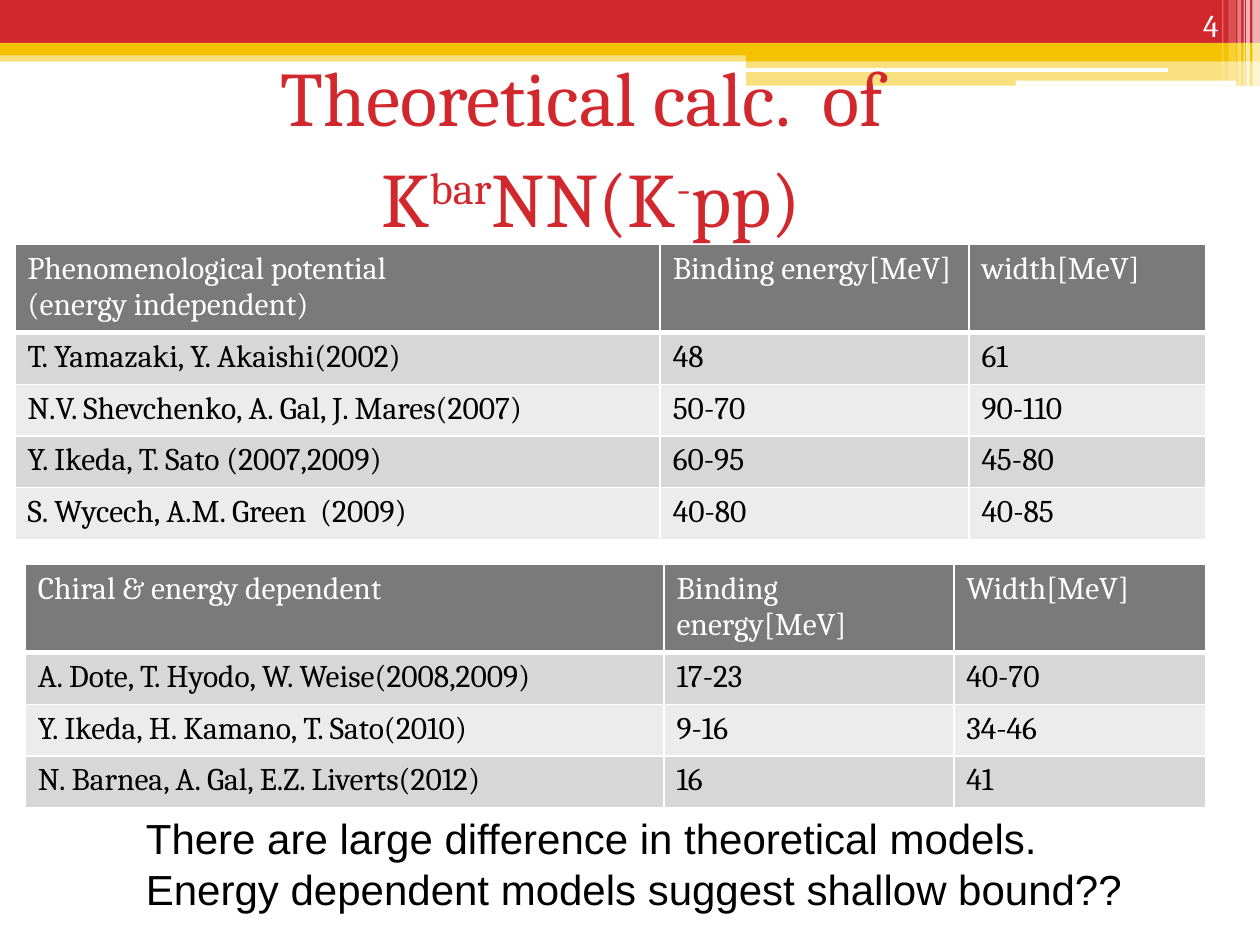
from dataclasses import dataclass

from lxml import etree
from pptx import Presentation
from pptx.dml.color import RGBColor
from pptx.enum.shapes import MSO_SHAPE
from pptx.enum.text import MSO_ANCHOR, MSO_AUTO_SIZE, PP_ALIGN
from pptx.oxml.ns import qn
from pptx.util import Inches, Pt

RECTANGLE, ROUNDED = MSO_SHAPE.RECTANGLE, MSO_SHAPE.ROUNDED_RECTANGLE
TOP, BOTTOM = MSO_ANCHOR.TOP, MSO_ANCHOR.BOTTOM
CENTER, RIGHT = PP_ALIGN.CENTER, PP_ALIGN.RIGHT
NO_FIT, GROW = MSO_AUTO_SIZE.NONE, MSO_AUTO_SIZE.SHAPE_TO_FIT_TEXT

# The slide is a grid of 100 columns by 75 rows.
COLUMNS, ROWS = 100, 75
SLIDE_WIDTH, SLIDE_HEIGHT = Inches(10), Inches(7.5)


@dataclass(frozen=True)
class Theme:
    red: str = "D1282E"
    yellow: str = "F5C201"
    white: str = "FFFFFF"
    black: str = "000000"
    header: str = "7A7A7A"
    bands: tuple = ("D7D7D7", "ECECEC")
    serif: str = "Cambria"
    sans: str = "Arial"
    title_size: int = 44
    title_leading: int = 58
    note_size: int = 24
    body_size: int = 18


THEME = Theme()


def across(columns):
    return round(SLIDE_WIDTH * columns / COLUMNS)


def down(rows):
    return round(SLIDE_HEIGHT * rows / ROWS)


def place(box):
    left, top, width, height = box
    return across(left), down(top), across(width), down(height)


def add_run(paragraph, text, size, color, font=THEME.serif, raised=False):
    run = paragraph.add_run()
    run.text = text
    run.font.name = font
    run.font.size = Pt(size)
    run.font.bold = False
    run.font.color.rgb = RGBColor.from_string(color)
    if raised:
        run.font._element.set("baseline", "30000")


def paragraphs_for(frame, lines):
    """Yield one paragraph of the frame with each line."""
    for index, line in enumerate(lines):
        yield (frame.add_paragraph() if index else frame.paragraphs[0]), line


def add_bar(slide, box, color, opacity=100, kind=RECTANGLE):
    bar = slide.shapes.add_shape(kind, *place(box))
    bar.shadow.inherit = False
    bar.line.fill.background()
    bar.fill.solid()
    bar.fill.fore_color.rgb = RGBColor.from_string(color)
    if opacity < 100:
        tint = bar.element.spPr.find(qn("a:solidFill"))[0]
        etree.SubElement(tint, qn("a:alpha"), val=str(opacity * 1000))


def add_banner(slide, box):
    left, top, width, height = box
    split = left + 59.2
    right_part = left + width - split
    add_bar(slide, (left, top + 4, width, 0.9), THEME.yellow, 50)
    add_bar(slide, (left, top, width, 3.4), THEME.red)
    add_bar(slide, (left, top + 3.4, width, 1), THEME.yellow)
    add_bar(slide, (split, top + 3.9, right_part, 0.95), THEME.yellow)
    add_bar(slide, (split, top + 4.85, right_part, height - 4.85), THEME.yellow, 50)
    add_bar(slide, (split, top + 5.4, 33.5, 0.3), THEME.white, kind=ROUNDED)
    add_bar(slide, (left + 80.6, top + 6.4, 17.5, 0.4), THEME.white, kind=ROUNDED)
    # Offset, width, height and opacity of each stripe at the right end.
    stripes = [(99.4, 0.6, height, 65), (98.9, 0.3, height, 65),
               (98.7, 0.1, height, 60), (98.2, 0.3, height, 40),
               (97.5, 0.6, height - 0.4, 20), (97, 0.1, height - 0.4, 30)]
    for offset, stripe_width, stripe_height, opacity in stripes:
        add_bar(slide, (left + offset, top, stripe_width, stripe_height),
                THEME.white, opacity)


def add_page_number(slide, box, number):
    frame = slide.shapes.add_textbox(*place(box)).text_frame
    frame.word_wrap = True
    frame.vertical_anchor = BOTTOM
    paragraph = frame.paragraphs[0]
    paragraph.alignment = RIGHT
    add_run(paragraph, number, THEME.body_size, THEME.white)


def set_borders(cell, bottom_width):
    properties = cell._tc.get_or_add_tcPr()
    for side, width in (("L", 1), ("R", 1), ("T", 1), ("B", bottom_width)):
        line = etree.SubElement(properties, qn(f"a:ln{side}"), w=str(Pt(width)))
        fill = etree.SubElement(line, qn("a:solidFill"))
        etree.SubElement(fill, qn("a:srgbClr"), val=THEME.white)


def fill_cell(cell, text, fill, color, bottom_width):
    set_borders(cell, bottom_width)
    cell.fill.solid()
    cell.fill.fore_color.rgb = RGBColor.from_string(fill)
    for paragraph, line in paragraphs_for(cell.text_frame, text.split("\n")):
        add_run(paragraph, line, THEME.body_size, color)


def add_result_table(slide, box, column_widths, header_height, records):
    table = slide.shapes.add_table(len(records), len(column_widths), *place(box)).table
    for column, width in zip(table.columns, column_widths):
        column.width = across(width)
    for index, record in enumerate(records):
        is_header = index == 0
        table.rows[index].height = down(header_height if is_header else 4.1)
        fill = THEME.header if is_header else THEME.bands[(index - 1) % 2]
        color = THEME.white if is_header else THEME.black
        for cell, text in zip(table.rows[index].cells, record):
            fill_cell(cell, text, fill, color, 3 if is_header else 1)


def set_title(slide, box, lines):
    title = slide.shapes.title
    title.left, title.top, title.width, title.height = place(box)
    title.element.getparent().append(title.element)  # in front of the banner
    frame = title.text_frame
    frame.auto_size = NO_FIT
    frame.word_wrap = True
    frame.vertical_anchor = TOP
    for paragraph, line in paragraphs_for(frame, lines):
        paragraph.alignment = CENTER
        paragraph.line_spacing = Pt(THEME.title_leading)
        for text, raised in line:
            add_run(paragraph, text, THEME.title_size, THEME.red, raised=raised)


def add_conclusion(slide, box, lines):
    frame = slide.shapes.add_textbox(*place(box)).text_frame
    frame.word_wrap = False
    frame.auto_size = GROW
    for paragraph, line in paragraphs_for(frame, lines):
        add_run(paragraph, line, THEME.note_size, THEME.black, THEME.sans)


def main():
    presentation = Presentation()
    presentation.slide_width, presentation.slide_height = SLIDE_WIDTH, SLIDE_HEIGHT
    slide = presentation.slides.add_slide(presentation.slide_layouts[5])

    add_banner(slide, (0, 0, COLUMNS, 6.8))
    add_page_number(slide, (89.4, 0, 8.3, 4), "4")
    add_result_table(slide, (2, 44.8, 93.7, 19.2), (50.7, 23, 20), 4.1, [
        ("Chiral & energy dependent", "Binding energy[MeV]", "Width[MeV]"),
        ("A. Dote, T. Hyodo, W. Weise(2008,2009)", "17-23", "40-70"),
        ("Y. Ikeda, H. Kamano, T. Sato(2010)", "9-16", "34-46"),
        ("N. Barnea, A. Gal, E.Z. Liverts(2012)", "16", "41"),
    ])
    add_result_table(slide, (1.2, 19.4, 94.5, 23.2), (51.2, 24.5, 18.8), 7, [
        ("Phenomenological potential\n(energy independent)",
         "Binding energy[MeV]", "width[MeV]"),
        ("T. Yamazaki, Y. Akaishi(2002)", "48", "61"),
        ("N.V. Shevchenko, A. Gal, J. Mares(2007)", "50-70", "90-110"),
        ("Y. Ikeda, T. Sato (2007,2009)", "60-95", "45-80"),
        ("S. Wycech, A.M. Green  (2009)", "40-80", "40-85"),
    ])
    set_title(slide, (0, 2.7, 93.8, 11.8), [
        [("Theoretical calc.  of ", False)],
        [("K", False), ("bar", True), ("NN(K", False), ("-", True), ("pp)", False)],
    ])
    add_conclusion(slide, (10.6, 64, 82, 9.1), [
        "There are large difference in theoretical models.",
        "Energy dependent models suggest shallow bound??",
    ])
    presentation.save("out.pptx")


if __name__ == "__main__":
    main()
